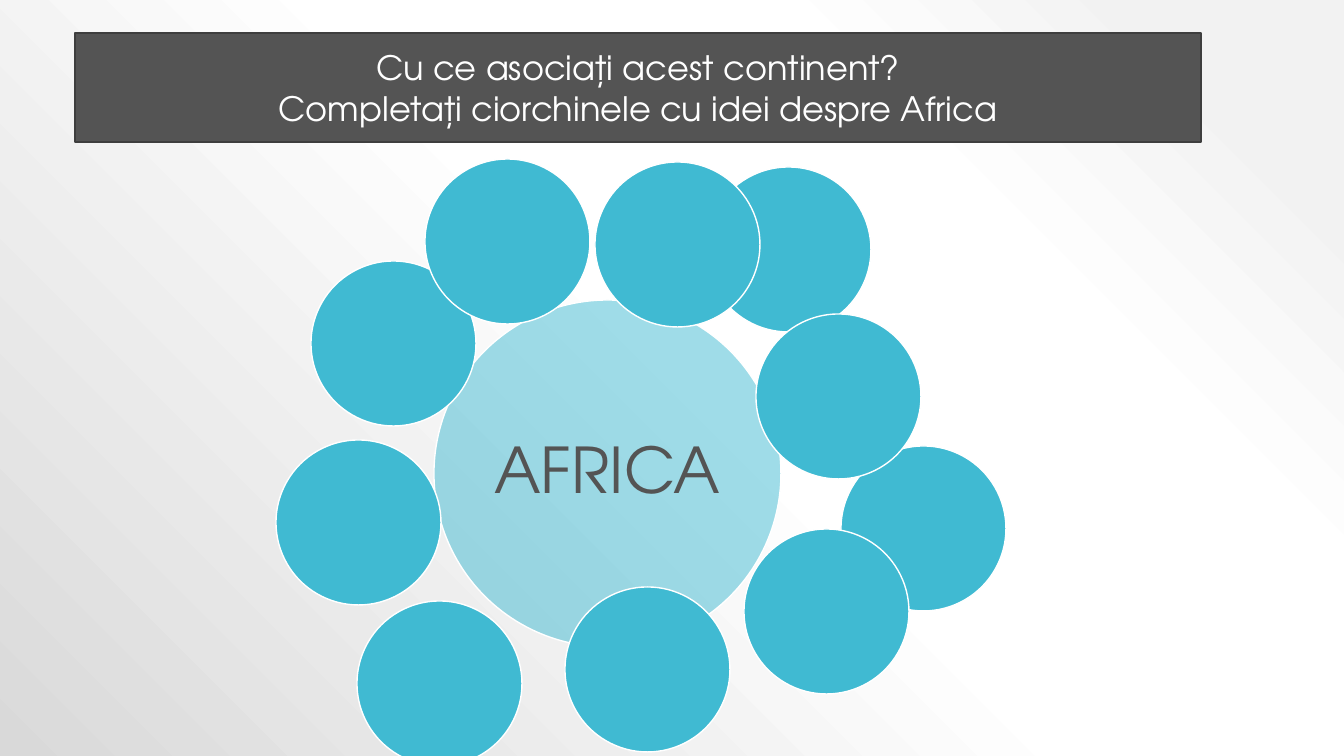
from lxml import etree
from pptx import Presentation
from pptx.dml.color import RGBColor
from pptx.enum.shapes import MSO_SHAPE as Shape
from pptx.enum.text import MSO_ANCHOR as Anchor, MSO_AUTO_SIZE as AutoSize, PP_ALIGN as Align
from pptx.oxml.ns import qn
from pptx.util import Emu, Pt

COLORS = {
    "white": "FFFFFF",
    "pale": "F2F2F2",
    "silver": "D9D9D9",
    "charcoal": "545454",
    "outline": "3E3E3E",
    "teal": "40BAD2",
}
FONT = "TeX Gyre Adventor"
EMU_PER_PX = 914400 / 100.8
IDEA_SIZE = 165
IDEA_POSITIONS = [
    (841, 446), (311, 261), (706, 167), (425, 159), (565, 587),
    (595, 162), (276, 440), (357, 601), (756, 314), (744, 529),
]


def px(length):
    return Emu(round(length * EMU_PER_PX))


def color(name):
    return RGBColor.from_string(COLORS[name])


class ClusterSlide:
    """Holds the slide and the style shared by its elements."""

    def __init__(self, presentation):
        self.slide = presentation.slides.add_slide(presentation.slide_layouts[5])

    def paint_background(self, stops):
        """Fill the background with a gradient centred on the top right corner."""
        self.slide.background.fill.gradient()
        gradient = self.slide.element.find(".//" + qn("a:gradFill"))
        for child in list(gradient):
            gradient.remove(child)
        stop_list = etree.SubElement(gradient, qn("a:gsLst"))
        for percent, name in stops:
            stop = etree.SubElement(stop_list, qn("a:gs"), pos=str(percent * 1000))
            etree.SubElement(stop, qn("a:srgbClr"), val=COLORS[name])
        center = etree.SubElement(gradient, qn("a:path"), {"path": "circle"})
        etree.SubElement(center, qn("a:fillToRect"), l="100000", b="100000")

    def paint(self, shape, fill, line):
        shape.fill.solid()
        shape.fill.fore_color.rgb = color(fill)
        shape.line.color.rgb = color(line)
        shape.line.width = Pt(1)

    def set_text(self, shape, text, size, font_color, line_spacing=1.0):
        frame = shape.text_frame
        frame.text = text
        frame.word_wrap = True
        frame.auto_size = AutoSize.NONE
        frame.vertical_anchor = Anchor.MIDDLE
        for paragraph in frame.paragraphs:
            paragraph.alignment = Align.CENTER
            paragraph.line_spacing = line_spacing
            for run in paragraph.runs:
                run.font.name = FONT
                run.font.size = Pt(size)
                run.font.color.rgb = color(font_color)

    def add_title(self, text, left, top, width, height):
        title = self.slide.shapes.title
        title.left, title.top = px(left), px(top)
        title.width, title.height = px(width), px(height)
        outline = etree.Element(qn("a:prstGeom"), prst="roundRect")
        etree.SubElement(outline, qn("a:avLst"))
        title.element.spPr.insert(1, outline)
        self.paint(title, "charcoal", "outline")
        self.set_text(title, text, 24, "white")

    def add_circle(self, left, top, size, opacity=100):
        circle = self.slide.shapes.add_shape(
            Shape.OVAL, px(left), px(top), px(size), px(size))
        circle.shadow.inherit = False
        self.paint(circle, "teal", "white")
        if opacity < 100:
            fill_color = circle.element.spPr.find(qn("a:solidFill"))[0]
            etree.SubElement(fill_color, qn("a:alpha"), val=str(opacity * 1000))
        return circle

    def add_topic(self, text, left, top, size):
        topic = self.add_circle(left, top, size, opacity=50)
        self.set_text(topic, text, 45, "charcoal", line_spacing=0.9)
        frame = topic.text_frame
        frame.margin_left = frame.margin_right = px(6)
        frame.margin_top = frame.margin_bottom = px(6)


def main():
    presentation = Presentation()
    presentation.slide_width, presentation.slide_height = px(1344), px(756)
    cluster = ClusterSlide(presentation)
    cluster.paint_background(
        [(10, "pale"), (28, "white"), (48, "white"), (100, "silver")])
    cluster.add_title(
        "Cu ce asociați acest continent?\nCompletați ciorchinele cu idei despre Africa",
        75, 33, 1126, 109)
    cluster.add_topic("AFRICA", 434, 300, 347)
    for left, top in IDEA_POSITIONS:
        cluster.add_circle(left, top, IDEA_SIZE)
    presentation.save("out.pptx")


if __name__ == "__main__":
    main()
